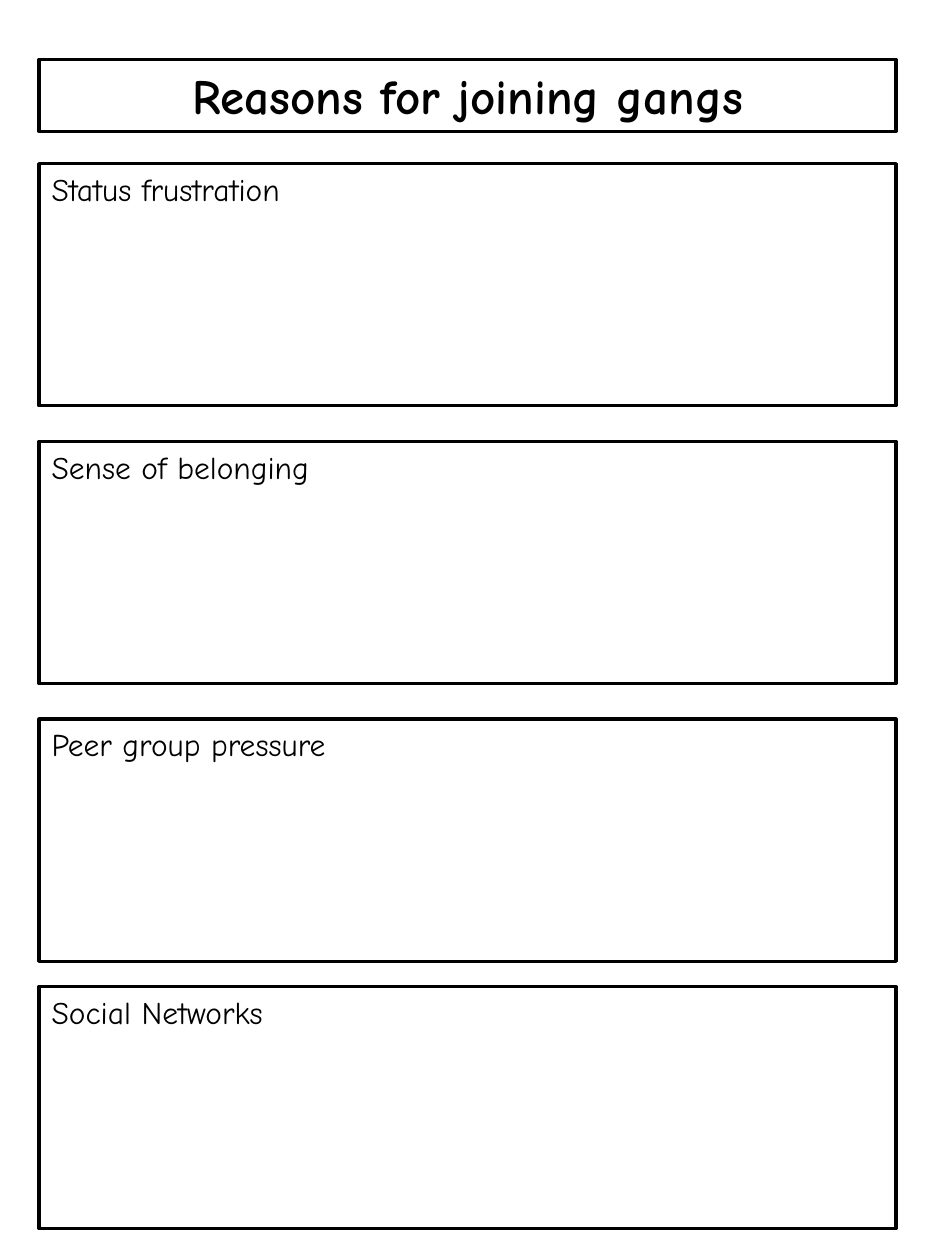
from lxml import etree
from pptx import Presentation
from pptx import util as u
from pptx.dml.color import RGBColor
from pptx.enum import text
from pptx.oxml.ns import qn

BLACK = RGBColor(0, 0, 0)
WHITE = RGBColor(255, 255, 255)

worksheet = Presentation()
worksheet.slide_width = u.Cm(19.05)
worksheet.slide_height = u.Cm(25.4)
page = worksheet.slides.add_slide(worksheet.slide_layouts[6])

heading_format = {"size": u.Pt(28), "bold": True, "name": "Comic Neue"}
reason_format = {"size": u.Pt(18), "bold": False, "name": "Comic Neue"}
GROW = text.MSO_AUTO_SIZE.SHAPE_TO_FIT_TEXT
FIXED = text.MSO_AUTO_SIZE.NONE
CENTER = text.PP_ALIGN.CENTER
LEFT = text.PP_ALIGN.LEFT

sections = [("Reasons for joining gangs", 1.2, 1.45, heading_format, CENTER, GROW)]
reasons = ["Status frustration", "Sense of belonging", "Peer group pressure"]
for row, reason in enumerate(reasons):
    sections.append((reason, 3.3 + 5.6 * row, 4.88, reason_format, LEFT, FIXED))
sections.append(("Social Networks", 19.89, 4.88, reason_format, LEFT, FIXED))

for wording, top, height, letter_format, alignment, sizing in sections:
    section = page.shapes.add_textbox(u.Cm(0.79), u.Cm(top), u.Cm(17.27), u.Cm(height))
    section.fill.solid()
    section.fill.fore_color.rgb = WHITE
    section.line.color.rgb = BLACK
    section.line.width = u.Pt(2)
    section.text_frame.word_wrap = True
    section.text_frame.auto_size = sizing
    paragraph = section.text_frame.paragraphs[0]
    paragraph.alignment = alignment
    label = paragraph.add_run()
    label.text = wording
    for attribute, value in letter_format.items():
        setattr(label.font, attribute, value)
    label.font.color.rgb = BLACK
    if letter_format is heading_format:
        outline = etree.Element(qn("a:ln"), w=str(u.Pt(0.9)))
        outline_fill = etree.SubElement(outline, qn("a:solidFill"))
        etree.SubElement(outline_fill, qn("a:srgbClr"), val=str(BLACK))
        label.font._element.insert(0, outline)

worksheet.save("out.pptx")
